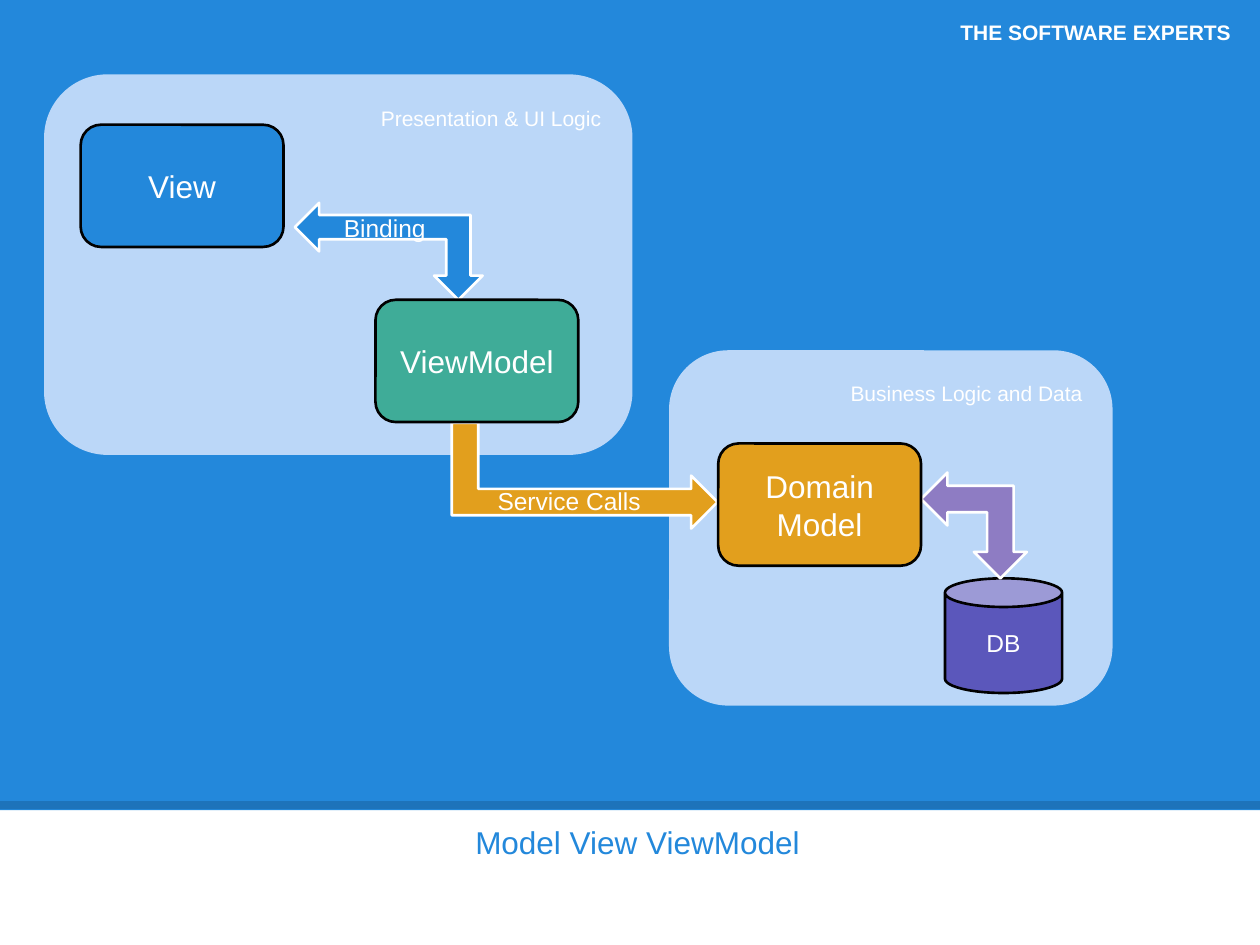
from collections import namedtuple

from lxml import etree
from pptx import Presentation
from pptx import util as u
from pptx.dml.color import RGBColor
from pptx.enum import shapes, text
from pptx.oxml import ns

COLORS = {
    "blue": "2388DB", "pale": "BBD7F8", "white": "FFFFFF", "black": "000000",
    "green": "3FAC98", "orange": "E29F1D", "indigo": "5B57BB", "violet": "8E7CC3",
}
COLUMNS, ROWS = 100, 75
NODE_W, NODE_H = 16.1, 9.7
FONT = "Arial"
KIND = shapes.MSO_SHAPE
ALIGN = text.PP_ALIGN
ANCHOR = text.MSO_ANCHOR

Box = namedtuple("Box", "x y w h")

deck = Presentation()
deck.slide_width, deck.slide_height = u.Inches(10), u.Inches(7.5)
CELL_W, CELL_H = deck.slide_width / COLUMNS, deck.slide_height / ROWS


def emu(box):
    return [round(v) for v in (box.x * CELL_W, box.y * CELL_H, box.w * CELL_W, box.h * CELL_H)]


def inside(box, x, y, w, h):
    return Box(box.x + x, box.y + y, w, h)


def rgb(name):
    return RGBColor.from_string(COLORS[name])


def write(shape, words, size, align, anchor=ANCHOR.MIDDLE, color="white", bold=False):
    frame = shape.text_frame
    frame.word_wrap = True
    frame.auto_size = text.MSO_AUTO_SIZE.NONE
    frame.vertical_anchor = anchor
    frame.margin_left = frame.margin_right = frame.margin_top = frame.margin_bottom = u.Inches(0.1)
    paragraph = frame.paragraphs[0]
    paragraph.alignment = align
    run = paragraph.add_run()
    run.text = words
    run.font.name, run.font.size, run.font.bold = FONT, u.Pt(size), bold
    run.font.color.rgb = rgb(color)
    return paragraph


def block(slide, kind, box, fill, line=None, turn=0):
    shape = slide.shapes.add_shape(kind, *emu(box))
    shape.shadow.inherit = False
    shape.rotation = turn
    shape.fill.solid()
    shape.fill.fore_color.rgb = rgb(fill)
    if line:
        shape.line.color.rgb = rgb(line)
        shape.line.width = u.Pt(1.5)
    else:
        shape.line.fill.background()
    return shape


def label(slide, box, words, size, align=ALIGN.LEFT, bold=False):
    write(slide.shapes.add_textbox(*emu(box)), words, size, align, bold=bold)


def node(slide, box, words, fill, kind=KIND.ROUNDED_RECTANGLE, size=18):
    write(block(slide, kind, box, fill, "black"), words, size, ALIGN.CENTER)


def panel(slide, box, words):
    shape = block(slide, KIND.ROUNDED_RECTANGLE, box, "pale")
    write(shape, words, 12, ALIGN.RIGHT, ANCHOR.TOP)


def backdrop(slide, box):
    block(slide, KIND.RECTANGLE, box, "blue")
    y = box.y + box.h - 0.4
    left, top, width, _ = emu(Box(box.x, y, box.w, 0))
    rule = slide.shapes.add_connector(shapes.MSO_CONNECTOR.STRAIGHT, left, top, left + width, top)
    rule.line.width = u.Pt(4.5)
    rule.line.color.rgb = rgb("black")
    tint = rule._element.spPr.find(".//" + ns.qn("a:srgbClr"))
    etree.SubElement(tint, ns.qn("a:alpha"), val="15000")
    etree.SubElement(rule._element.spPr, ns.qn("a:effectLst"))
    label(slide, inside(box, 74.1, 1, 24.6, 3.1), "THE SOFTWARE EXPERTS", 12, ALIGN.RIGHT, True)


def caption(slide, box):
    title = slide.shapes.title
    title.left, title.top, title.width, title.height = emu(box)
    line = write(title, "Model View ViewModel", 18, ALIGN.CENTER, ANCHOR.TOP, "blue")
    indents = line._p.get_or_add_pPr()
    indents.set("marL", str(u.Inches(0.31)))
    indents.set("indent", str(u.Inches(-0.19)))


def service_calls(slide, box):
    turned = inside(box, (box.w - box.h) / 2, (box.h - box.w) / 2, box.h, box.w)
    block(slide, KIND.BENT_UP_ARROW, turned, "orange", "white", 90)
    label(slide, inside(box, 2.65, 4.85, NODE_W, 2.7), "Service Calls", 14)


def presentation_logic(slide, box):
    node(slide, inside(box, 2.9, 4, NODE_W, NODE_H), "View", "blue")
    block(slide, KIND.LEFT_UP_ARROW, inside(box, 23.5, 6.6, 7.7, 14.9), "blue", "white", 270)
    label(slide, inside(box, 22.8, 11.1, NODE_W, 2.1), "Binding", 14)
    node(slide, inside(box, 26.3, 17.9, NODE_W, NODE_H), "ViewModel", "green")


def business_logic(slide, box):
    node(slide, inside(box, 21.9, 18.1, 9.3, 9.1), "DB", "indigo", KIND.CAN, 14)
    block(slide, KIND.LEFT_UP_ARROW, inside(box, 20, 9.7, 8.4, 8.4), "violet", "white", 270)
    node(slide, inside(box, 3.9, 7.4, NODE_W, NODE_H), "Domain Model", "orange")


def main():
    slide = deck.slides.add_slide(deck.slide_layouts[5])
    presentation = Box(3.5, 5.9, 46.7, 30.2)
    business = Box(53.1, 27.8, 35.2, 28.2)
    backdrop(slide, Box(0, 0, COLUMNS, 64.3))
    caption(slide, Box(5, 64.3, 90, 7.6))
    panel(slide, business, "Business Logic and Data")
    panel(slide, presentation, "Presentation & UI Logic")
    service_calls(slide, Box(35.85, 33.55, 21.1, 8.4))
    presentation_logic(slide, presentation)
    business_logic(slide, business)
    deck.save("out.pptx")


if __name__ == "__main__":
    main()
